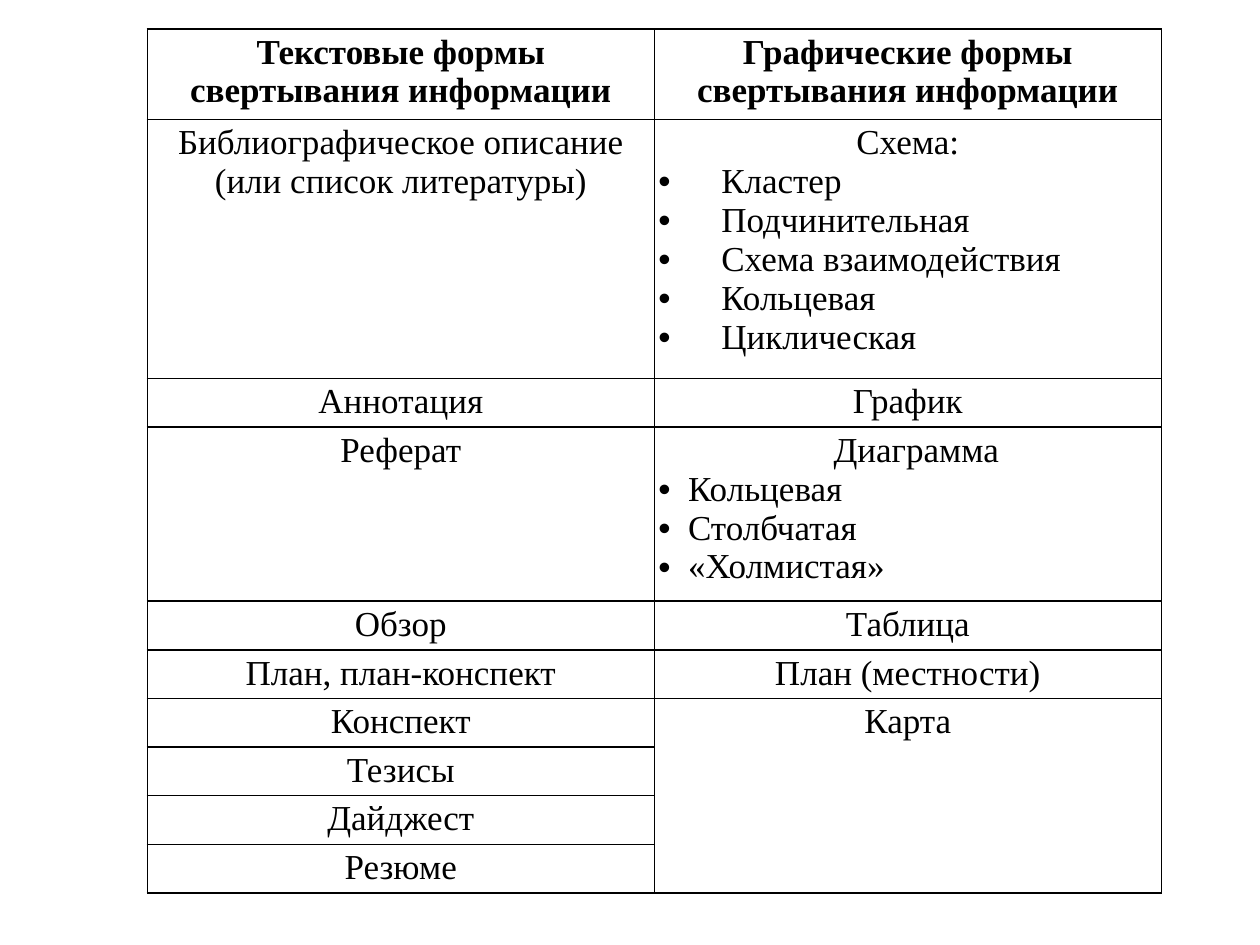
from lxml.etree import SubElement
from pptx import Presentation
from pptx.dml.color import RGBColor
from pptx.enum.text import PP_ALIGN as Align
from pptx.oxml.ns import qn
from pptx.util import Cm, Pt

INK = "000000"
FONT = "Times New Roman"
CELL_MARGIN = Cm(0.08)
COLUMN_WIDTH = Cm(10.22)
LINE_ROW = 0.98

# Height in cm, text form, graphic form (title, bullets, title shift, bullet indent)
rows = [
    (1.83, ["Текстовые формы свертывания информации"],
     ("Графические формы свертывания информации", [], 0, 0)),
    (5.22, ["Библиографическое описание", "(или список литературы)"],
     ("Схема:", ["Кластер", "Подчинительная", "Схема взаимодействия",
                 "Кольцевая", "Циклическая"], 0, 1.27)),
    (LINE_ROW, ["Аннотация"], ("График", [], 0, 0)),
    (3.51, ["Реферат"],
     ("Диаграмма", ["Кольцевая", "Столбчатая", "«Холмистая»"], 0.34, 0.6)),
    (LINE_ROW, ["Обзор"], ("Таблица", [], 0, 0)),
    (LINE_ROW, ["План, план-конспект"], ("План (местности)", [], 0, 0)),
    (LINE_ROW, ["Конспект"], ("Карта", [], 0, 0)),
    (LINE_ROW, ["Тезисы"], None),
    (LINE_ROW, ["Дайджест"], None),
    (LINE_ROW, ["Резюме"], None),
]


def color(hex_value):
    return RGBColor.from_string(hex_value)


def outline(cell):
    """Draw a thin solid line on all four sides of the cell."""
    properties = cell._tc.get_or_add_tcPr()
    for side in ("lnL", "lnR", "lnT", "lnB"):
        line = SubElement(properties, qn(f"a:{side}"), w=str(Pt(1)))
        fill = SubElement(line, qn("a:solidFill"))
        SubElement(fill, qn("a:srgbClr"), val=INK)


prs = Presentation()
prs.slide_width, prs.slide_height = Cm(25.4), Cm(19.05)
slide = prs.slides.add_slide(prs.slide_layouts[6])

total_height = Cm(sum(height for height, _, _ in rows))
forms = slide.shapes.add_table(len(rows), 2, Cm(2.97), Cm(0.58),
                               2 * COLUMN_WIDTH, total_height).table
forms.first_row = forms.horz_banding = False
for column in forms.columns:
    column.width = COLUMN_WIDTH

for row_index, (height, text_form, graphic_form) in enumerate(rows):
    forms.rows[row_index].height = Cm(height)
    title, bullets, shift, indent = graphic_form or ("", [], 0, 0)
    for column_index, lines in enumerate((text_form, [title] + bullets)):
        cell = forms.cell(row_index, column_index)
        cell.margin_left = cell.margin_right = CELL_MARGIN
        cell.margin_top = cell.margin_bottom = CELL_MARGIN
        outline(cell)
        cell.fill.background()
        cell.text_frame.text = "\n".join(lines)
        for line_index, paragraph in enumerate(cell.text_frame.paragraphs):
            properties = paragraph._p.get_or_add_pPr()
            if column_index == 1 and line_index > 0:
                paragraph.alignment = Align.LEFT
                properties.set("marL", str(Cm(indent)))
                properties.set("indent", str(-Cm(indent)))
                SubElement(properties, qn("a:buFont"), typeface="Arial")
                SubElement(properties, qn("a:buChar"), char="•")
            else:
                paragraph.alignment = Align.CENTER
                if column_index == 1 and shift:
                    properties.set("marL", str(Cm(shift)))
            for run in paragraph.runs:
                run.font.name = FONT
                run.font.size = Pt(20)
                run.font.bold = row_index == 0
                run.font.color.rgb = color(INK)

# The map spans the last four text forms
forms.cell(6, 1).merge(forms.cell(9, 1))

prs.save("out.pptx")
